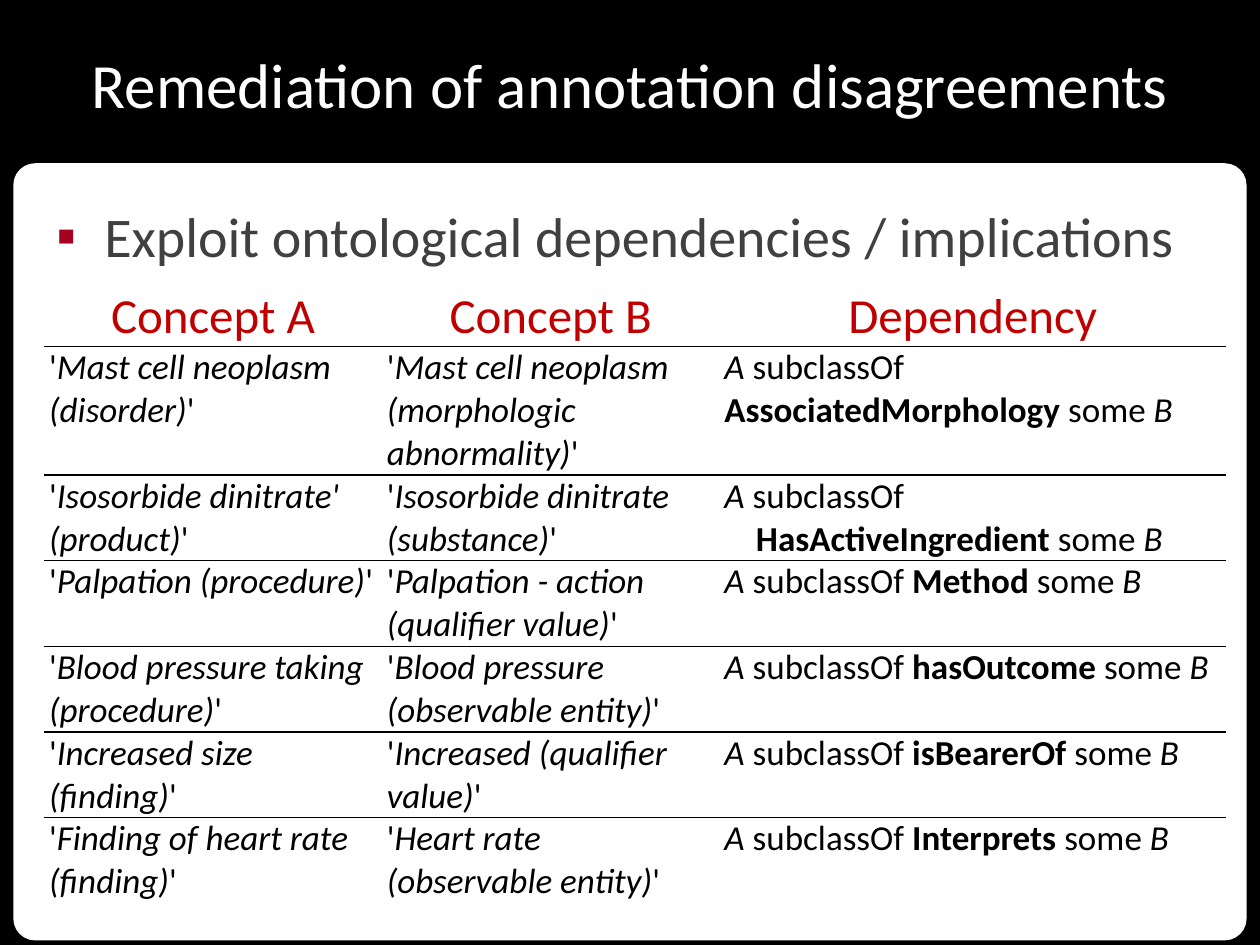
from lxml import etree
from pptx import Presentation, util as u
from pptx.dml.color import RGBColor
from pptx.enum import shapes, text
from pptx.oxml.ns import qn

COLORS = {"black": "000000", "white": "FFFFFF", "gray": "404040",
          "red": "C00000", "bullet": "A50021"}
FONT = "Calibri"
PLAIN_TABLE = "{2D5ABB26-0587-4C30-8999-92F81FD0307C}"
TITLE = "Remediation of annotation disagreements"
POINT = "Exploit ontological dependencies / implications"
HEADERS = ["Concept A", "Concept B", "Dependency"]
DEPENDENCIES = [
    ("Mast cell neoplasm (disorder)",
     "Mast cell neoplasm (morphologic abnormality)", "AssociatedMorphology"),
    ("Isosorbide dinitrate' (product)",
     "Isosorbide dinitrate (substance)", "HasActiveIngredient"),
    ("Palpation (procedure)", "Palpation - action (qualifier value)", "Method"),
    ("Blood pressure taking (procedure)",
     "Blood pressure (observable entity)", "hasOutcome"),
    ("Increased size (finding)", "Increased (qualifier value)", "isBearerOf"),
    ("Finding of heart rate (finding)",
     "Heart rate (observable entity)", "Interprets"),
]
BROKEN_LINE = "HasActiveIngredient"
BREAK = ("", "break")
WIDTH, HEIGHT = 10, 7.5
LEFT = 0.35
COLUMNS = [2.68, 2.68, 4.02]
LINE_HEIGHT = 0.34
ROWS = [0.47, 3 * LINE_HEIGHT] + [2 * LINE_HEIGHT] * 5


def color(name):
    return RGBColor.from_string(COLORS[name])


def style(para, size, shade, align=text.PP_ALIGN.LEFT):
    para.alignment = align
    para.font.name = FONT
    para.font.size = u.Pt(size)
    para.font.color.rgb = color(shade)


def add_spans(para, spans):
    for words, look in spans:
        if look == "break":
            para.add_line_break()
            continue
        span = para.add_run()
        span.text = words
        span.font.italic = look == "italic"
        span.font.bold = look == "bold"


def hang(para, inches):
    properties = para._p.get_or_add_pPr()
    properties.set("marL", str(u.Inches(inches)))
    properties.set("indent", str(-u.Inches(inches)))
    return properties


def add_bullet(para):
    properties = hang(para, 0.38)
    shade = etree.SubElement(properties, qn("a:buClr"))
    etree.SubElement(shade, qn("a:srgbClr"), val=COLORS["bullet"])
    etree.SubElement(properties, qn("a:buFont"), typeface="Arial")
    etree.SubElement(properties, qn("a:buChar"), char="▪")


def add_panel(page, kind, place, shade):
    panel = page.shapes.add_shape(kind, *map(u.Inches, place))
    panel.shadow.inherit = False
    panel.fill.solid()
    panel.fill.fore_color.rgb = color(shade)
    return panel


def add_rule(cell, side):
    line = etree.Element(qn(side), w=str(u.Pt(1)))
    fill = etree.SubElement(line, qn("a:solidFill"))
    etree.SubElement(fill, qn("a:srgbClr"), val=COLORS["black"])
    cell._tc.get_or_add_tcPr().insert(0, line)


def quoted(concept):
    return [("'", ""), (concept, "italic"), ("'", "")]


def dependency(relation):
    gap = [BREAK] if relation == BROKEN_LINE else []
    return [("A ", "italic"), ("subclassOf ", ""), *gap,
            (relation + " ", "bold"), ("some ", ""), ("B", "italic")]


def add_dependency_table(page):
    frame = page.shapes.add_table(
        len(ROWS), len(COLUMNS), u.Inches(LEFT), u.Inches(2.28),
        u.Inches(sum(COLUMNS)), u.Inches(sum(ROWS)))
    table = frame.table
    table.horz_banding = table.first_row = False
    table._tbl.find(".//" + qn("a:tableStyleId")).text = PLAIN_TABLE
    for column, width in zip(table.columns, COLUMNS):
        column.width = u.Inches(width)
    for row, height in zip(table.rows, ROWS):
        row.height = u.Inches(height)

    body = [(quoted(a), quoted(b), dependency(relation))
            for a, b, relation in DEPENDENCIES]
    grid = [[[(header, "")] for header in HEADERS]] + body
    for row, entries in enumerate(grid):
        for column, spans in enumerate(entries):
            cell = table.cell(row, column)
            cell.fill.background()
            cell.margin_left = cell.margin_right = u.Inches(0.04)
            cell.margin_top = cell.margin_bottom = 0
            para = cell.text_frame.paragraphs[0]
            add_spans(para, spans)
            if row == 0:
                cell.vertical_anchor = text.MSO_ANCHOR.MIDDLE
                style(para, 28, "red", text.PP_ALIGN.CENTER)
            else:
                style(para, 20, "black")
            if BREAK in spans:
                hang(para, 0.25)
            if row < len(ROWS) - 1:
                add_rule(cell, "a:lnB")
            if row > 0:
                add_rule(cell, "a:lnT")


def main():
    deck = Presentation()
    deck.slide_width, deck.slide_height = u.Inches(WIDTH), u.Inches(HEIGHT)
    page = deck.slides.add_slide(deck.slide_layouts[6])
    page.background.fill.solid()
    page.background.fill.fore_color.rgb = color("black")

    panel = add_panel(page, shapes.MSO_SHAPE.ROUNDED_RECTANGLE,
                      (0.12, 1.31, WIDTH - 2 * 0.12, 6.14), "white")
    panel.adjustments[0] = 0.026
    panel.line.color.rgb = color("white")
    panel.line.width = u.Pt(2)

    banner = add_panel(page, shapes.MSO_SHAPE.RECTANGLE,
                       (0, 0.36, WIDTH, 0.61), "black")
    banner.line.fill.background()
    banner.text_frame.vertical_anchor = text.MSO_ANCHOR.MIDDLE
    heading = banner.text_frame.paragraphs[0]
    heading.add_run().text = TITLE
    style(heading, 36, "white", text.PP_ALIGN.CENTER)

    box = page.shapes.add_textbox(
        *map(u.Inches, (LEFT, 1.55, WIDTH - 2 * LEFT, 5.75)))
    box.text_frame.word_wrap = True
    point = box.text_frame.paragraphs[0]
    point.add_run().text = POINT
    add_bullet(point)
    style(point, 32, "gray")

    add_dependency_table(page)
    deck.save("out.pptx")


if __name__ == "__main__":
    main()
